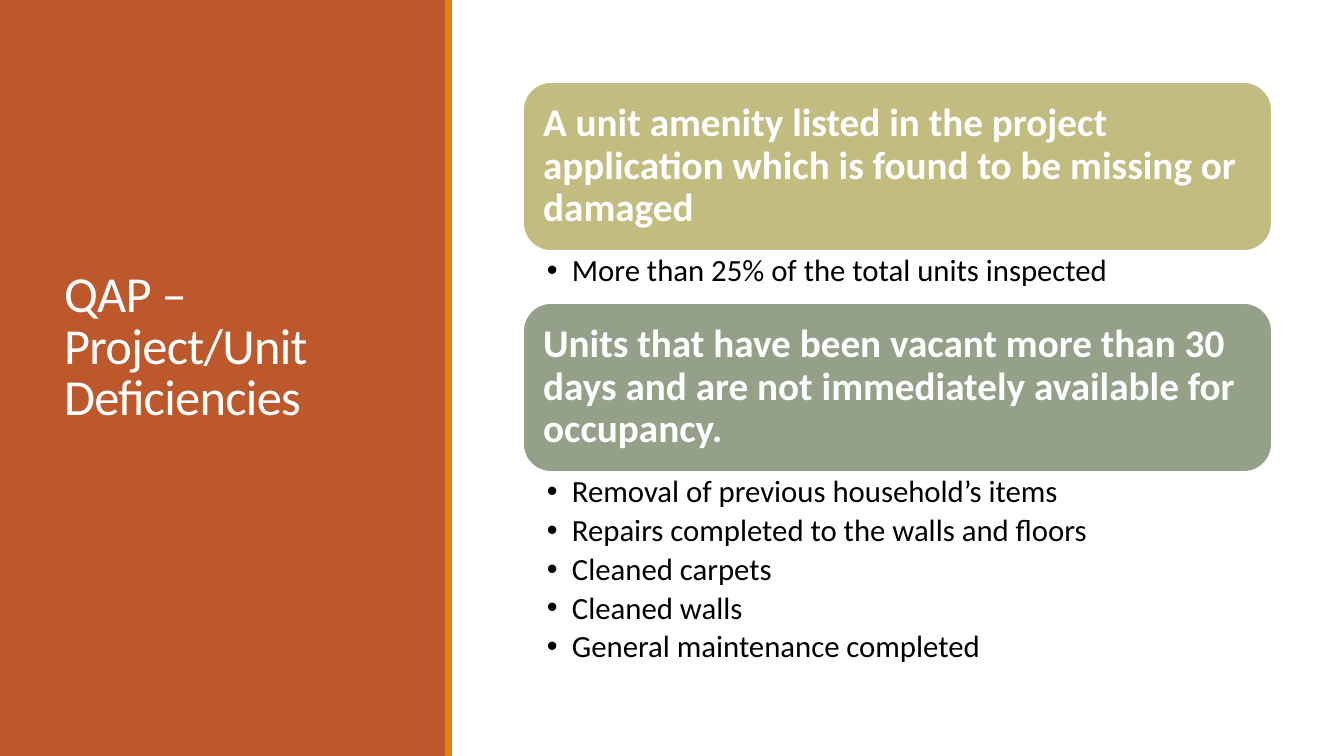
from lxml.etree import SubElement
from pptx import Presentation
from pptx.dml.color import RGBColor
from pptx.enum.shapes import MSO_SHAPE as Shape
from pptx.enum.text import MSO_ANCHOR as Anchor, MSO_AUTO_SIZE as AutoSize, PP_ALIGN as Align
from pptx.oxml.ns import qn
from pptx.util import Pt

PX = 914400 / 100.8
COLORS = {
    "rust": "BD582C", "orange": "E48312", "khaki": "C2BC80",
    "sage": "94A088", "white": "FFFFFF", "black": "000000",
}
SECTIONS = [
    ("khaki", 82,
     "A unit amenity listed in the project application which is found to be missing or damaged",
     ["More than 25% of the total units inspected"]),
    ("sage", 303,
     "Units that have been vacant more than 30 days and are not immediately available for occupancy.",
     ["Removal of previous household’s items",
      "Repairs completed to the walls and floors",
      "Cleaned carpets",
      "Cleaned walls",
      "General maintenance completed"]),
]
LIST_LEFT, LIST_WIDTH, HEADING_HEIGHT, BULLET_INDENT = 523, 749, 169, 25


def px(*lengths):
    return [round(length * PX) for length in lengths]


def format_text(frame, size, color, spacing, margins, anchor, bold=False):
    frame.word_wrap = True
    frame.auto_size = AutoSize.NONE
    frame.vertical_anchor = anchor
    (frame.margin_left, frame.margin_top,
     frame.margin_right, frame.margin_bottom) = px(*margins)
    for paragraph in frame.paragraphs:
        paragraph.alignment = Align.LEFT
        paragraph.line_spacing = spacing
        for run in paragraph.runs:
            run.font.name = "Calibri"
            run.font.size = Pt(size)
            run.font.bold = bold
            run.font.color.rgb = RGBColor.from_string(COLORS[color])


presentation = Presentation()
presentation.slide_width, presentation.slide_height = px(1344, 756)
slide = presentation.slides.add_slide(presentation.slide_layouts[5])
shapes = slide.shapes

# Left panel and its accent stripe
for color, left, width in [("rust", 0, 446), ("orange", 445, 7)]:
    panel = shapes.add_shape(Shape.RECTANGLE, *px(left, 0, width, 756))
    panel.shadow.inherit = False
    panel.fill.solid()
    panel.fill.fore_color.rgb = RGBColor.from_string(COLORS[color])
    panel.line.fill.background()

# Title, brought in front of the panel
title = shapes.title
title.left, title.top, title.width, title.height = px(54, 57, 340, 636)
title.text_frame.text = "QAP – Project/Unit Deficiencies"
format_text(title.text_frame, 36, "white", 0.85, (10, 5, 10, 57), Anchor.MIDDLE)
for run in title.text_frame.paragraphs[0].runs:
    run.font._element.set("spc", "-50")
shapes._spTree.append(title._element)

# Headings with their bullet lists
for color, top, heading_text, items in SECTIONS:
    heading = shapes.add_shape(
        Shape.ROUNDED_RECTANGLE, *px(LIST_LEFT, top, LIST_WIDTH, HEADING_HEIGHT))
    heading.shadow.inherit = False
    heading.fill.solid()
    heading.fill.fore_color.rgb = RGBColor.from_string(COLORS[color])
    heading.line.color.rgb = RGBColor.from_string(COLORS["white"])
    heading.line.width = Pt(1.25)
    heading.text_frame.text = heading_text
    format_text(heading.text_frame, 28, "white", 0.9, (12, 12, 12, 12), Anchor.MIDDLE, bold=True)

    bullets = shapes.add_textbox(
        *px(LIST_LEFT, top + HEADING_HEIGHT, LIST_WIDTH, 12 + 40 * len(items)))
    bullets.text_frame.text = "\n".join(items)
    format_text(bullets.text_frame, 22, "black", 0.9, (24, 4, 22, 4), Anchor.TOP)
    for paragraph in bullets.text_frame.paragraphs:
        paragraph.space_after = Pt(4)
        properties = paragraph._p.get_or_add_pPr()
        indent = px(BULLET_INDENT)[0]
        properties.set("marL", str(indent))
        properties.set("indent", str(-indent))
        SubElement(properties, qn("a:buFont"), typeface="Arial")
        SubElement(properties, qn("a:buChar"), char="•")

presentation.save("out.pptx")
